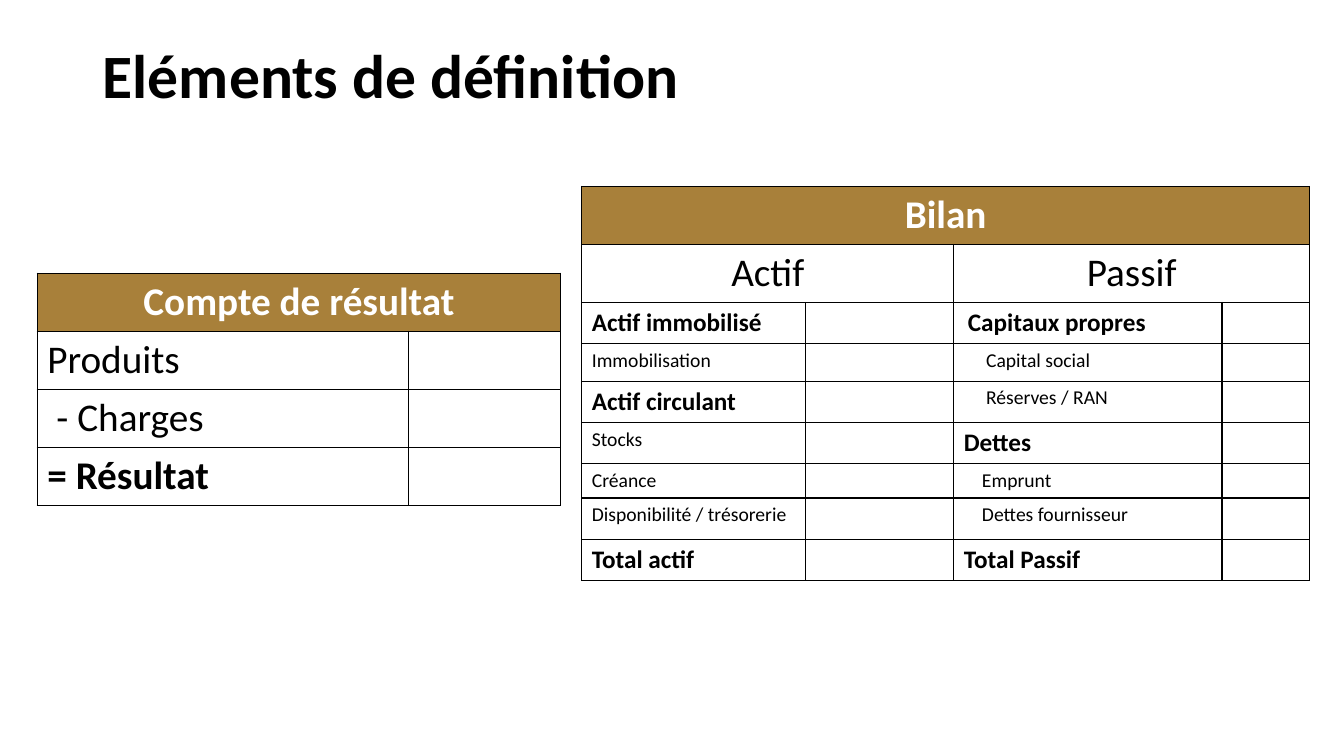
from lxml.etree import SubElement
from pptx import Presentation
from pptx.dml.color import RGBColor
from pptx.enum.text import MSO_ANCHOR, MSO_AUTO_SIZE, PP_ALIGN
from pptx.oxml.ns import qn
from pptx.util import Inches, Pt

BIG, HEADING, DETAIL = 28, 18, 14

# Each entry: text, size, bold, left indent in inches
RESULT_LINES = [
    ("Produits", BIG, False, 0),
    ("- Charges", BIG, False, 0.09),
    ("= Résultat", BIG, True, 0),
]
BALANCE_LINES = [
    (("Actif immobilisé", HEADING, True, 0), ("Capitaux propres", HEADING, True, 0.04)),
    (("Immobilisation", DETAIL, False, 0), ("Capital social", DETAIL, False, 0.22)),
    (("Actif circulant", HEADING, True, 0), ("Réserves / RAN", DETAIL, False, 0.22)),
    (("Stocks", DETAIL, False, 0), ("Dettes", HEADING, True, 0)),
    (("Créance", DETAIL, False, 0), ("Emprunt", DETAIL, False, 0.18)),
    (("Disponibilité / trésorerie", DETAIL, False, 0),
     ("Dettes fournisseur", DETAIL, False, 0.18)),
    (("Total actif", HEADING, True, 0), ("Total Passif", HEADING, True, 0)),
]
BALANCE_HEIGHTS = [0.575, 0.575, 0.41, 0.37, 0.41, 0.41, 0.34, 0.41, 0.41]


def rgb(code):
    return RGBColor.from_string(code)


class SlideBuilder:
    font_name = "Calibri"
    ink = "000000"
    paper = "FFFFFF"
    accent = "A8803A"

    def __init__(self, slide):
        self.slide = slide

    def format_runs(self, paragraph, size, bold, color):
        for run in paragraph.runs:
            run.font.name = self.font_name
            run.font.size = Pt(size)
            run.font.bold = bold
            run.font.color.rgb = rgb(color)

    def title(self, text, left, top, width, height):
        heading = self.slide.shapes.title
        heading.left, heading.top = Inches(left), Inches(top)
        heading.width, heading.height = Inches(width), Inches(height)
        frame = heading.text_frame
        frame.text = text
        frame.word_wrap = True
        frame.auto_size = MSO_AUTO_SIZE.NONE
        frame.vertical_anchor = MSO_ANCHOR.TOP
        paragraph = frame.paragraphs[0]
        paragraph.alignment = PP_ALIGN.LEFT
        paragraph.line_spacing = 0.9
        self.format_runs(paragraph, 44, True, self.ink)

    def table(self, left, top, widths, heights):
        """Add an empty, unfilled grid with thin black borders."""
        grid = self.slide.shapes.add_table(
            len(heights), len(widths), Inches(left), Inches(top),
            Inches(sum(widths)), Inches(sum(heights))).table
        grid.first_row = grid.horz_banding = False
        for column, width in zip(grid.columns, widths):
            column.width = Inches(width)
        for row, height in zip(grid.rows, heights):
            row.height = Inches(height)
            for cell in row.cells:
                self.borders(cell)
                cell.fill.background()
                # Keeps blank cells from stretching their row
                end = SubElement(cell.text_frame.paragraphs[0]._p, qn("a:endParaRPr"))
                end.set("sz", str(DETAIL * 100))
        return grid

    def borders(self, cell):
        properties = cell._tc.get_or_add_tcPr()
        for side in ("a:lnL", "a:lnR", "a:lnT", "a:lnB"):
            line = SubElement(properties, qn(side), w=str(Pt(1)))
            fill = SubElement(line, qn("a:solidFill"))
            SubElement(fill, qn("a:srgbClr"), val=self.ink)

    def entry(self, cell, text, size, bold=False, indent=0, color=None):
        paragraph = cell.text_frame.paragraphs[0]
        paragraph.text = text
        if indent:
            properties = paragraph._p.get_or_add_pPr()
            properties.set("marL", str(Inches(indent)))
            properties.set("indent", "0")
        self.format_runs(paragraph, size, bold, color or self.ink)

    def header(self, grid, row, first, last, text, banner=False):
        """Merge a stretch of one row and centre a heading in it."""
        cell = grid.cell(row, first)
        cell.merge(grid.cell(row, last))
        self.entry(cell, text, BIG, banner, color=self.paper if banner else self.ink)
        cell.text_frame.paragraphs[0].alignment = PP_ALIGN.CENTER
        if banner:
            cell.fill.solid()
            cell.fill.fore_color.rgb = rgb(self.accent)


def main():
    deck = Presentation()
    deck.slide_width, deck.slide_height = Inches(13.33), Inches(7.5)
    builder = SlideBuilder(deck.slides.add_slide(deck.slide_layouts[5]))
    builder.title("Eléments de définition", 0.92, 0.4, 11.5, 1.45)

    result = builder.table(0.37, 2.71, [3.68, 1.51], [0.575] * 4)
    builder.header(result, 0, 0, 1, "Compte de résultat", banner=True)
    for row, line in enumerate(RESULT_LINES, start=1):
        builder.entry(result.cell(row, 0), *line)

    balance = builder.table(5.77, 1.85, [2.22, 1.47, 2.66, 0.87], BALANCE_HEIGHTS)
    builder.header(balance, 0, 0, 3, "Bilan", banner=True)
    builder.header(balance, 1, 0, 1, "Actif")
    builder.header(balance, 1, 2, 3, "Passif")
    for row, (asset, liability) in enumerate(BALANCE_LINES, start=2):
        builder.entry(balance.cell(row, 0), *asset)
        builder.entry(balance.cell(row, 2), *liability)

    deck.save("out.pptx")


if __name__ == "__main__":
    main()
